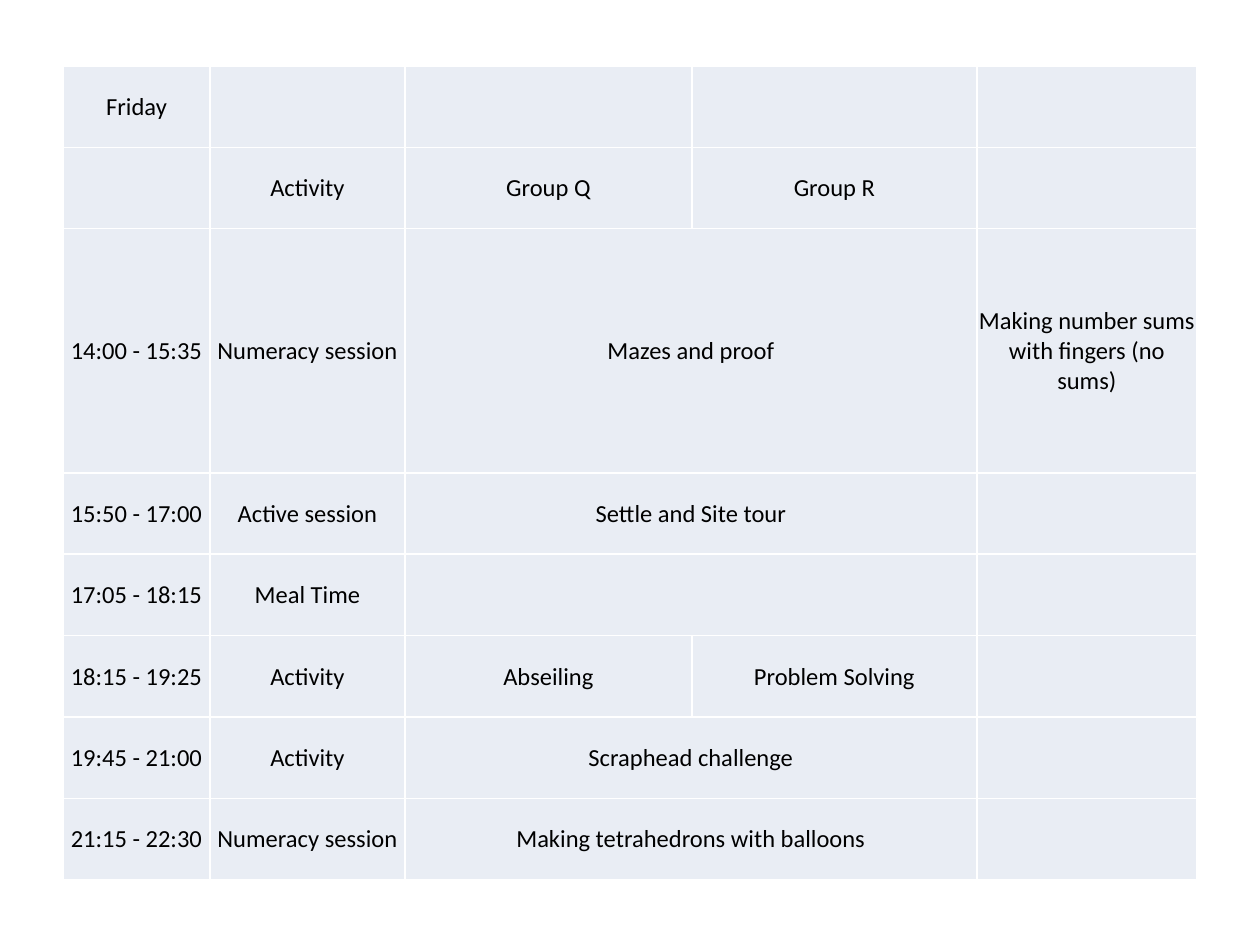
from lxml import etree
from pptx import Presentation
from pptx import util as u
from pptx.dml.color import RGBColor
from pptx.enum import text
from pptx.oxml.ns import qn

PX = u.Inches(1) / 126
COLORS = {"cell": "E9EDF4", "border": "FFFFFF", "text": "000000"}
FONT = "Calibri"
COL_WIDTHS = [147, 195, 287, 285, 220]
ROW_WEIGHTS = [1, 1, 3, 1, 1, 1, 1, 1]
# None continues the cell to its left
TIMETABLE = [
    ["Friday", "", "", "", ""],
    ["", "Activity", "Group Q", "Group R", ""],
    ["14:00 - 15:35", "Numeracy session", "Mazes and proof", None,
     "Making number sums with fingers (no sums)"],
    ["15:50 - 17:00", "Active session", "Settle and Site tour", None, ""],
    ["17:05 - 18:15", "Meal Time", "", None, ""],
    ["18:15 - 19:25", "Activity", "Abseiling", "Problem Solving", ""],
    ["19:45 - 21:00", "Activity", "Scraphead challenge", None, ""],
    ["21:15 - 22:30", "Numeracy session", "Making tetrahedrons with balloons", None, ""],
]


def px(n):
    return u.Emu(round(n * PX))


def rgb(name):
    return RGBColor.from_string(COLORS[name])


def set_borders(cell):
    tc_pr = cell._tc.get_or_add_tcPr()
    for i, side in enumerate(("lnL", "lnR", "lnT", "lnB")):
        ln = etree.Element(qn(f"a:{side}"), w=str(u.Pt(1)))
        fill = etree.SubElement(ln, qn("a:solidFill"))
        etree.SubElement(fill, qn("a:srgbClr"), val=COLORS["border"])
        tc_pr.insert(i, ln)


def format_cell(cell, words):
    cell.fill.solid()
    cell.fill.fore_color.rgb = rgb("cell")
    set_borders(cell)
    cell.vertical_anchor = text.MSO_ANCHOR.MIDDLE
    cell.margin_left = cell.margin_right = cell.margin_top = px(1)
    cell.margin_bottom = 0
    if not words:
        return
    cell.text_frame.text = words
    p = cell.text_frame.paragraphs[0]
    p.alignment = text.PP_ALIGN.CENTER
    font = p.runs[0].font
    font.name, font.size = FONT, u.Pt(14)
    font.color.rgb = rgb("text")


def add_timetable(slide, left, top, width, height):
    frame = slide.shapes.add_table(len(TIMETABLE), len(COL_WIDTHS),
                                   px(left), px(top), px(width), px(height))
    table = frame.table
    table.first_row = table.horz_banding = False
    for col, share in zip(table.columns, COL_WIDTHS):
        col.width = px(width * share / sum(COL_WIDTHS))
    for row, weight in zip(table.rows, ROW_WEIGHTS):
        row.height = px(height * weight / sum(ROW_WEIGHTS))
    for r, entries in enumerate(TIMETABLE):
        for c, words in enumerate(entries):
            format_cell(table.cell(r, c), words)
            if words is None:
                table.cell(r, c - 1).merge(table.cell(r, c))


def main():
    prs = Presentation()
    prs.slide_width, prs.slide_height = px(1260), px(945)
    slide = prs.slides.add_slide(prs.slide_layouts[6])
    add_timetable(slide, 63, 66, 1134, 814)
    prs.save("out.pptx")


if __name__ == "__main__":
    main()
